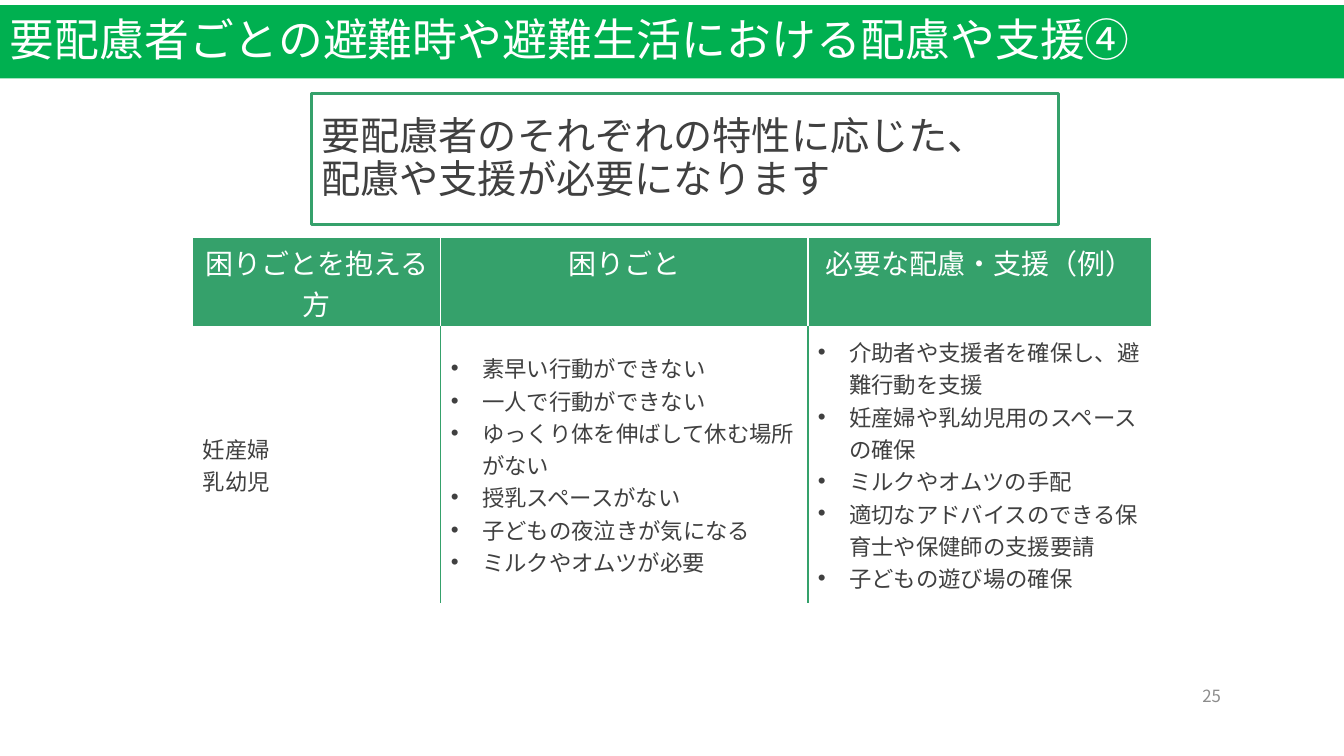
from lxml import etree
from pptx import Presentation
from pptx.dml.color import RGBColor
from pptx.enum.shapes import MSO_SHAPE
from pptx.enum.text import MSO_ANCHOR, PP_ALIGN
from pptx.oxml.ns import qn
from pptx.util import Cm, Pt

RECTANGLE = MSO_SHAPE.RECTANGLE
TOP, MIDDLE = MSO_ANCHOR.TOP, MSO_ANCHOR.MIDDLE
LEFT, CENTER, RIGHT = PP_ALIGN.LEFT, PP_ALIGN.CENTER, PP_ALIGN.RIGHT
FONT = "Noto Sans CJK JP"
COLORS = {
    "banner": "00B050",
    "green": "35A16B",
    "white": "FFFFFF",
    "text": "404040",
    "number": "8C8C8C",
}


def write_lines(frame, lines, size, color, align=LEFT, spacing=None, bullets=False):
    frame.word_wrap = True
    for index, line in enumerate(lines):
        para = frame.paragraphs[0] if index == 0 else frame.add_paragraph()
        para.text = line
        para.alignment = align
        para.line_spacing = spacing
        para.font.size = Pt(size)
        para.font.name = FONT
        para.font.color.rgb = RGBColor.from_string(COLORS[color])
        properties = para._p.pPr
        defaults = properties.find(qn("a:defRPr"))
        etree.SubElement(defaults, qn("a:ea"), typeface=FONT)
        if bullets:
            properties.set("marL", str(Cm(0.79)))
            properties.set("indent", str(-Cm(0.79)))
            bullet_font = etree.Element(qn("a:buFont"), typeface="Arial")
            bullet = etree.Element(qn("a:buChar"), char="•")
            defaults.addprevious(bullet_font)
            defaults.addprevious(bullet)


def set_borders(cell, colors, widths):
    properties = cell._tc.get_or_add_tcPr()
    for index, side in enumerate(("lnL", "lnR", "lnT", "lnB")):
        line = etree.Element(qn(f"a:{side}"), w=str(Pt(widths[index])))
        fill = etree.SubElement(line, qn("a:solidFill"))
        etree.SubElement(fill, qn("a:srgbClr"), val=COLORS[colors[index]])
        properties.insert(index, line)


deck = Presentation()
deck.slide_width = Cm(33.87)
deck.slide_height = Cm(19.05)
page = deck.slides.add_slide(deck.slide_layouts[6])

number_box = page.shapes.add_textbox(Cm(25.3), Cm(17.02), Cm(5.72), Cm(1.02))
number_box.text_frame.vertical_anchor = MIDDLE
write_lines(number_box.text_frame, ["25"], 12, "number", RIGHT)

title = ["要配慮者ごとの避難時や避難生活における配慮や支援④"]
message = ["要配慮者のそれぞれの特性に応じた、", "配慮や支援が必要になります"]
panels = [
    (0, 0.13, 33.87, 1.85, "banner", None, title, 32, "white", 0.9),
    (7.85, 2.36, 18.82, 3.3, "white", "green", message, 28, "text", 0.91),
]
for left, top, width, height, fill, outline, lines, size, color, spacing in panels:
    panel = page.shapes.add_shape(RECTANGLE, Cm(left), Cm(top), Cm(width), Cm(height))
    panel.shadow.inherit = False
    panel.fill.solid()
    panel.fill.fore_color.rgb = RGBColor.from_string(COLORS[fill])
    if outline:
        panel.line.color.rgb = RGBColor.from_string(COLORS[outline])
        panel.line.width = Pt(2.25)
    else:
        panel.line.fill.background()
    panel.text_frame.vertical_anchor = MIDDLE
    write_lines(panel.text_frame, lines, size, color, spacing=spacing)

columns = [
    (6.25, "困りごとを抱える方", ["妊産婦", "乳幼児"]),
    (9.25, "困りごと", [
        "素早い行動ができない",
        "一人で行動ができない",
        "ゆっくり体を伸ばして休む場所がない",
        "授乳スペースがない",
        "子どもの夜泣きが気になる",
        "ミルクやオムツが必要",
    ]),
    (8.66, "必要な配慮・支援（例）", [
        "介助者や支援者を確保し、避難行動を支援",
        "妊産婦や乳幼児用のスペースの確保",
        "ミルクやオムツの手配",
        "適切なアドバイスのできる保育士や保健師の支援要請",
        "子どもの遊び場の確保",
    ]),
]
frame = page.shapes.add_table(2, 3, Cm(4.86), Cm(5.98), Cm(24.16), Cm(9.2))
table = frame.table
table.first_row = False
table.horz_banding = False
table.rows[0].height = Cm(2.27)
table.rows[1].height = Cm(6.93)
last = len(columns) - 1
for index, (width, heading, needs) in enumerate(columns):
    table.columns[index].width = Cm(width)
    head, body = table.cell(0, index), table.cell(1, index)
    for cell, fill, anchor in ((head, "green", TOP), (body, "white", MIDDLE)):
        cell.fill.solid()
        cell.fill.fore_color.rgb = RGBColor.from_string(COLORS[fill])
        cell.vertical_anchor = anchor
    write_lines(head.text_frame, [heading], 20, "white", CENTER)
    write_lines(body.text_frame, needs, 16, "text", bullets=index > 0)
    left_color = "green" if index > 0 else "white"
    right_color = "green" if index < last else "white"
    set_borders(head, ["white"] * 4, [1, 1, 1, 3])
    set_borders(body, [left_color, right_color, "white", "white"], [1] * 4)

deck.save("out.pptx")
